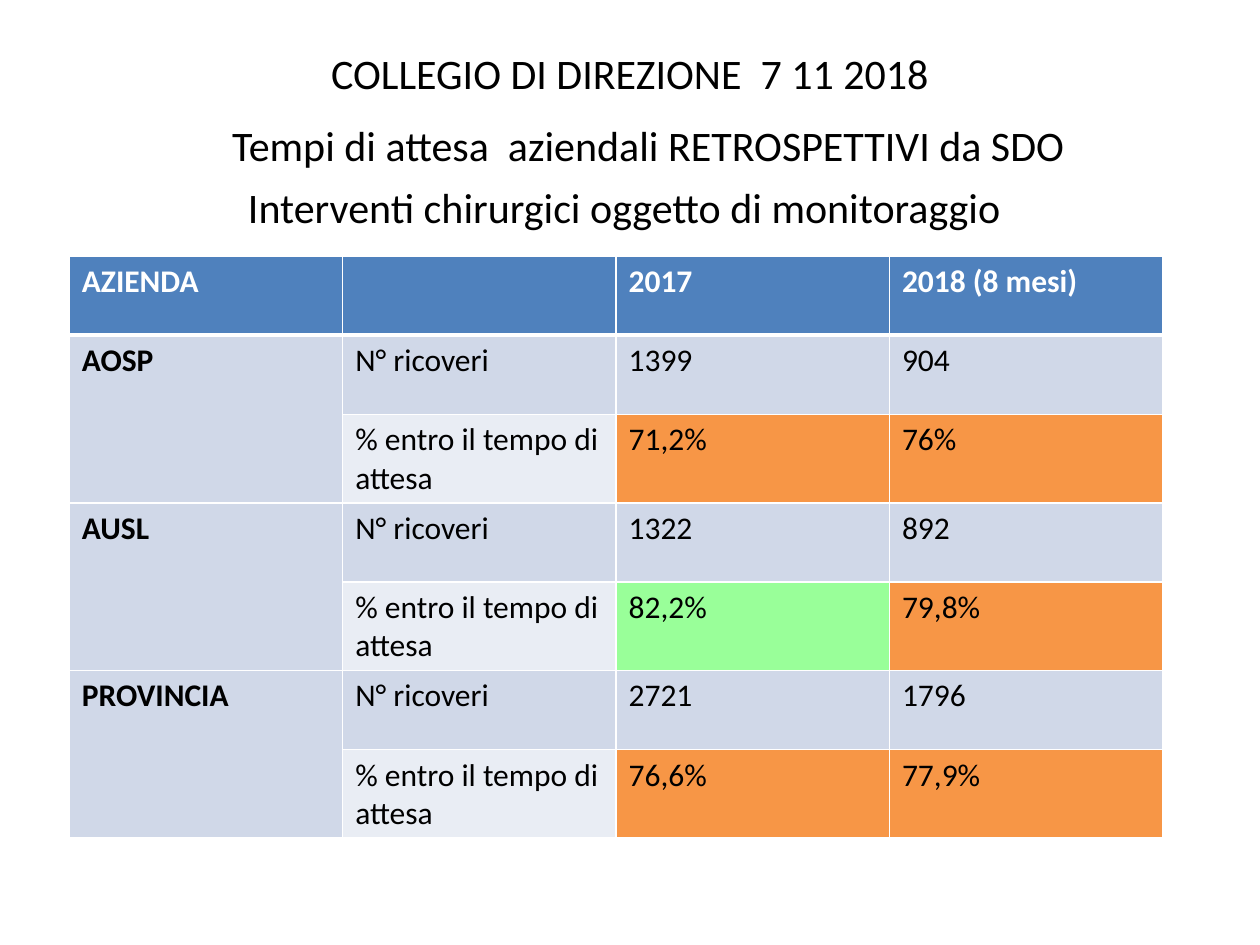
from dataclasses import dataclass

from lxml import etree
from pptx import Presentation
from pptx.dml.color import RGBColor
from pptx.enum.text import MSO_ANCHOR, PP_ALIGN
from pptx.oxml.ns import qn
from pptx.util import Inches, Pt

CENTER, LEFT = PP_ALIGN.CENTER, PP_ALIGN.LEFT
MIDDLE = MSO_ANCHOR.MIDDLE


@dataclass(frozen=True)
class Theme:
    font: str = "Calibri"
    heading: int = 24
    body: int = 18
    black: str = "000000"
    white: str = "FFFFFF"
    header: str = "4F81BD"
    count_row: str = "D0D8E8"
    share_row: str = "E9EDF4"
    below_target: str = "F79646"
    on_target: str = "99FF99"


THEME = Theme()
TARGET = 80


def write(paragraph, text, size=THEME.body, color=THEME.black, bold=False, align=LEFT, before=0):
    paragraph.alignment = align
    paragraph.space_before = Pt(before)
    run = paragraph.add_run()
    run.text = text
    run.font.name = THEME.font
    run.font.size = Pt(size)
    run.font.bold = bold
    run.font.color.rgb = RGBColor.from_string(color)


def style_cell(cell, fill, top=1, bottom=1):
    """Give the cell white borders, in points, and a solid fill."""
    properties = cell._tc.get_or_add_tcPr()
    for side, width in (("lnL", 1), ("lnR", 1), ("lnT", top), ("lnB", bottom)):
        line = etree.SubElement(properties, qn(f"a:{side}"), w=str(Pt(width)))
        solid = etree.SubElement(line, qn("a:solidFill"))
        etree.SubElement(solid, qn("a:srgbClr"), val=THEME.white)
    cell.fill.solid()
    cell.fill.fore_color.rgb = RGBColor.from_string(fill)


prs = Presentation()
prs.slide_width, prs.slide_height = Inches(10), Inches(7.5)
slide = prs.slides.add_slide(prs.slide_layouts[6])

# Headings
title = slide.shapes.add_textbox(Inches(0.5), Inches(0.3), Inches(9), Inches(0.56)).text_frame
title.word_wrap = True
title.vertical_anchor = MIDDLE
write(title.paragraphs[0], "COLLEGIO DI DIREZIONE  7 11 2018", size=THEME.heading, align=CENTER)

subtitle = slide.shapes.add_textbox(Inches(0.23), Inches(0.9), Inches(9.45), Inches(1.1)).text_frame
subtitle.word_wrap = True
topic = subtitle.paragraphs[0]
write(topic, "Tempi di attesa  aziendali RETROSPETTIVI da SDO", size=THEME.heading, align=CENTER)
topic._p.get_or_add_pPr().set("marL", str(Inches(0.38)))
write(subtitle.add_paragraph(), "Interventi chirurgici oggetto di monitoraggio",
      size=THEME.heading, align=CENTER, before=6.5)

# Waiting times: two rows for each health authority
headers = ["AZIENDA", "", "2017", "2018 (8 mesi)"]
authorities = [
    ("AOSP", ["1399", "904"], ["71,2%", "76%"]),
    ("AUSL", ["1322", "892"], ["82,2%", "79,8%"]),
    ("PROVINCIA", ["2721", "1796"], ["76,6%", "77,9%"]),
]
row_count = 1 + 2 * len(authorities)
table = slide.shapes.add_table(row_count, len(headers), Inches(0.55), Inches(2.03),
                               Inches(8.67), Inches(4.4)).table
for column in table.columns:
    column.width = Inches(2.17)
for row in table.rows:
    row.height = Inches(0.63)

for col, header in enumerate(headers):
    cell = table.cell(0, col)
    style_cell(cell, THEME.header, bottom=3)
    write(cell.text_frame.paragraphs[0], header, color=THEME.white, bold=True)

for index, (authority, counts, shares) in enumerate(authorities):
    count_row = 1 + 2 * index
    rows = [[authority, "N° ricoveri", *counts], ["", "% entro il tempo di attesa", *shares]]
    for offset, values in enumerate(rows):
        for col, value in enumerate(values):
            if offset == 0 or col == 0:
                fill = THEME.count_row
            elif col == 1:
                fill = THEME.share_row
            else:
                share = float(value.rstrip("%").replace(",", "."))
                fill = THEME.on_target if share >= TARGET else THEME.below_target
            cell = table.cell(count_row + offset, col)
            style_cell(cell, fill, top=3 if count_row + offset == 1 else 1)
            if value:
                write(cell.text_frame.paragraphs[0], value, bold=col == 0)
    table.cell(count_row, 0).merge(table.cell(count_row + 1, 0))

prs.save("out.pptx")
